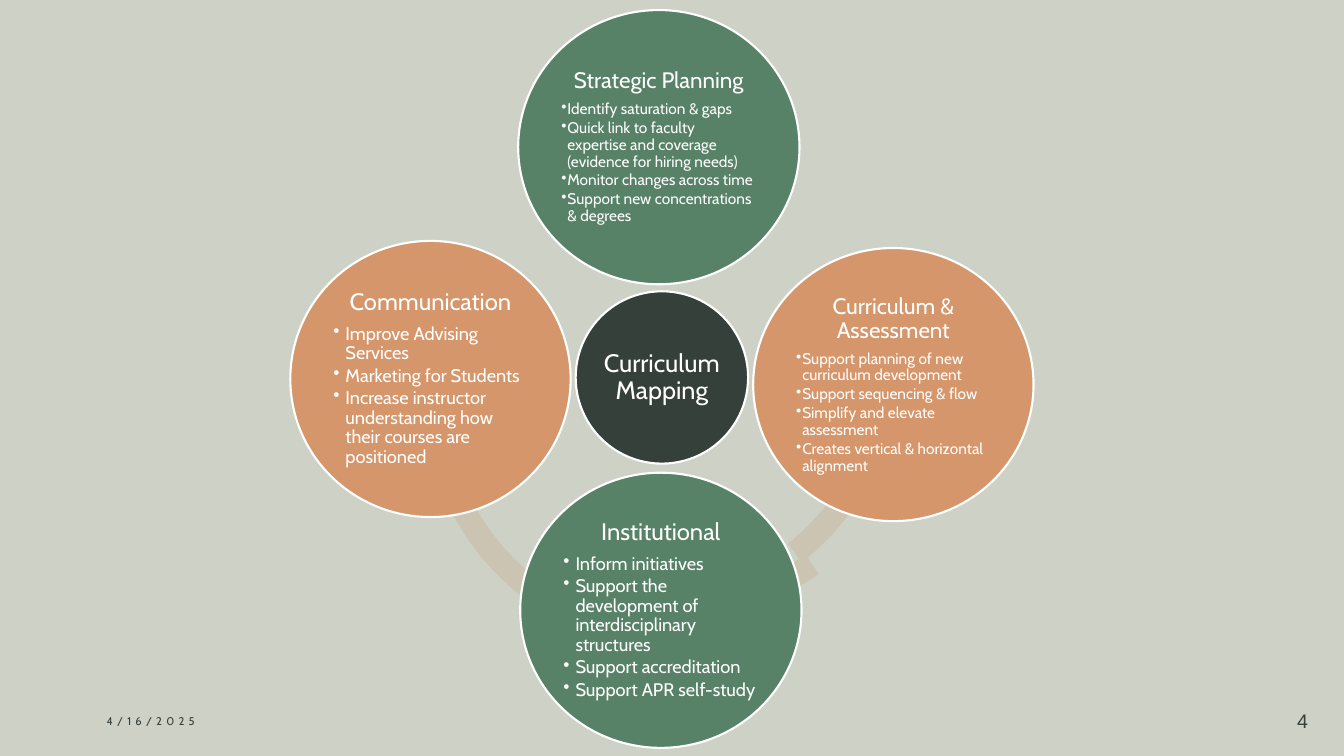
from lxml.etree import SubElement
from pptx import Presentation
from pptx.dml.color import RGBColor
from pptx.enum.shapes import MSO_SHAPE
from pptx.enum.text import MSO_ANCHOR, PP_ALIGN
from pptx.oxml.ns import qn
from pptx.util import Inches, Pt

BACKGROUND, DARK, GREEN, ORANGE, RING, WHITE = (
    "CDD1C6", "35403A", "588267", "D5966B", "CCC4B3", "FFFFFF")

# Centre x, centre y, start angle, end angle
RING_ARCS = [
    (50.45, 52.33, 110.23, 159.27),
    (50.45, 47.93, 56.41, 105.65),
    (47.97, 47.93, 3.09, 51.76),
    (47.97, 52.33, 164.03, 214.45),
]

# Box, fill, heading, heading size, bullet size, bullet indent, bullets
CIRCLES = [
    ((49.25, 49.93, 12.83, 22.8), DARK, "Curriculum Mapping", 18, 0, 0, []),
    ((49.02, 19.47, 20.93, 36.27), GREEN, "Strategic Planning", 16, 11, 0.45, [
        "Identify saturation & gaps",
        "Quick link to faculty expertise and coverage (evidence for hiring needs)",
        "Monitor changes across time",
        "Support new concentrations & degrees"]),
    ((66.47, 50.87, 20.86, 36.13), ORANGE, "Curriculum & Assessment", 16, 11, 0.45, [
        "Support planning of new curriculum development",
        "Support sequencing & flow",
        "Simplify and elevate assessment",
        "Creates vertical & horizontal alignment"]),
    ((49.17, 80.73, 20.93, 36.4), GREEN, "Institutional", 17, 13, 0.9, [
        "Inform initiatives",
        "Support the development of interdisciplinary structures",
        "Support accreditation",
        "Support APR self-study"]),
    ((32.03, 50.13, 20.86, 36.53), ORANGE, "Communication", 17, 13, 0.9, [
        "Improve Advising Services",
        "Marketing for Students",
        "Increase instructor understanding how their courses are positioned"]),
]


def color(hex_string):
    return RGBColor.from_string(hex_string)


class SlideBuilder:
    """Draws on one slide; boxes are centre x, centre y, width, height in percent."""

    font = "Cabin"

    def __init__(self, deck):
        self.deck = deck
        self.page = deck.slides.add_slide(deck.slide_layouts[6])
        fill = self.page.background.fill
        fill.solid()
        fill.fore_color.rgb = color(BACKGROUND)

    def across(self, share):
        return round(self.deck.slide_width * share / 100)

    def down(self, share):
        return round(self.deck.slide_height * share / 100)

    def place(self, box):
        """Turn a centred box into left, top, width and height."""
        x, y, width, height = box
        return (self.across(x - width / 2), self.down(y - height / 2),
                self.across(width), self.down(height))

    def format_runs(self, para, size, hex_string, font=None):
        for span in para.runs:
            span.font.name = font or self.font
            span.font.size = Pt(size)
            span.font.color.rgb = color(hex_string)

    def footer(self, box, text, size, align, font=None, spacing=0):
        """Add a footer line; spacing is the letter spacing in points."""
        frame = self.page.shapes.add_textbox(*self.place(box)).text_frame
        frame.word_wrap = True
        frame.vertical_anchor = MSO_ANCHOR.MIDDLE
        frame.text = text
        para = frame.paragraphs[0]
        para.alignment = align
        self.format_runs(para, size, DARK, font)
        if spacing:
            para.runs[0].font._element.set("spc", str(spacing * 100))

    def start_diagram(self):
        self.diagram = self.page.shapes.add_group_shape().shapes

    def shape(self, kind, box, fill):
        shape = self.diagram.add_shape(kind, *self.place(box))
        shape.shadow.inherit = False
        shape.fill.solid()
        shape.fill.fore_color.rgb = color(fill)
        return shape

    def ring_arc(self, x, y, start, end):
        arc = self.shape(MSO_SHAPE.BLOCK_ARC, (x, y, 37.88, 67.33), RING)
        arc.line.fill.background()
        # Angles are stored in 60000ths of a degree, adjustments in 100000ths
        arc.adjustments[0] = start * 0.6
        arc.adjustments[1] = end * 0.6
        arc.adjustments[2] = 0.046

    def circle(self, box, fill, heading, heading_size, bullet_size, indent, bullets):
        circle = self.shape(MSO_SHAPE.OVAL, box, fill)
        circle.line.color.rgb = color(WHITE)
        circle.line.width = Pt(1.5)
        frame = circle.text_frame
        frame.word_wrap = True
        frame.vertical_anchor = MSO_ANCHOR.MIDDLE
        frame.margin_left = frame.margin_right = self.across(0.15)
        frame.margin_top = frame.margin_bottom = self.down(0.27)
        frame.text = "\n".join([heading, *bullets])
        title, *items = frame.paragraphs
        title.alignment = PP_ALIGN.CENTER
        self.space(title, 35)
        self.format_runs(title, heading_size, WHITE)
        for item in items:
            item.alignment = PP_ALIGN.LEFT
            item.level = 1
            self.space(item, 15)
            self.bullet(item, indent)
            self.format_runs(item, bullet_size, WHITE)

    def space(self, para, after):
        """Tighten the lines and leave a percentage of a line after the paragraph."""
        para.line_spacing = 0.9
        gap = SubElement(para._p.get_or_add_pPr(), qn("a:spcAft"))
        SubElement(gap, qn("a:spcPct")).set("val", str(after * 1000))

    def bullet(self, para, indent):
        properties = para._p.get_or_add_pPr()
        properties.set("marL", str(self.across(indent)))
        properties.set("indent", str(-self.across(indent)))
        SubElement(properties, qn("a:buChar")).set("char", "•")


def main():
    deck = Presentation()
    deck.slide_width, deck.slide_height = Inches(13.33), Inches(7.5)
    builder = SlideBuilder(deck)
    builder.footer((18.45, 95.33, 22.51, 5.33), "4/16/2025", 8, PP_ALIGN.LEFT, spacing=3)
    builder.footer((95.91, 95.33, 4.28, 5.33), "4", 14, PP_ALIGN.RIGHT, font="Arial")
    builder.start_diagram()
    for arc in RING_ARCS:
        builder.ring_arc(*arc)
    for circle in CIRCLES:
        builder.circle(*circle)
    deck.save("out.pptx")


if __name__ == "__main__":
    main()
